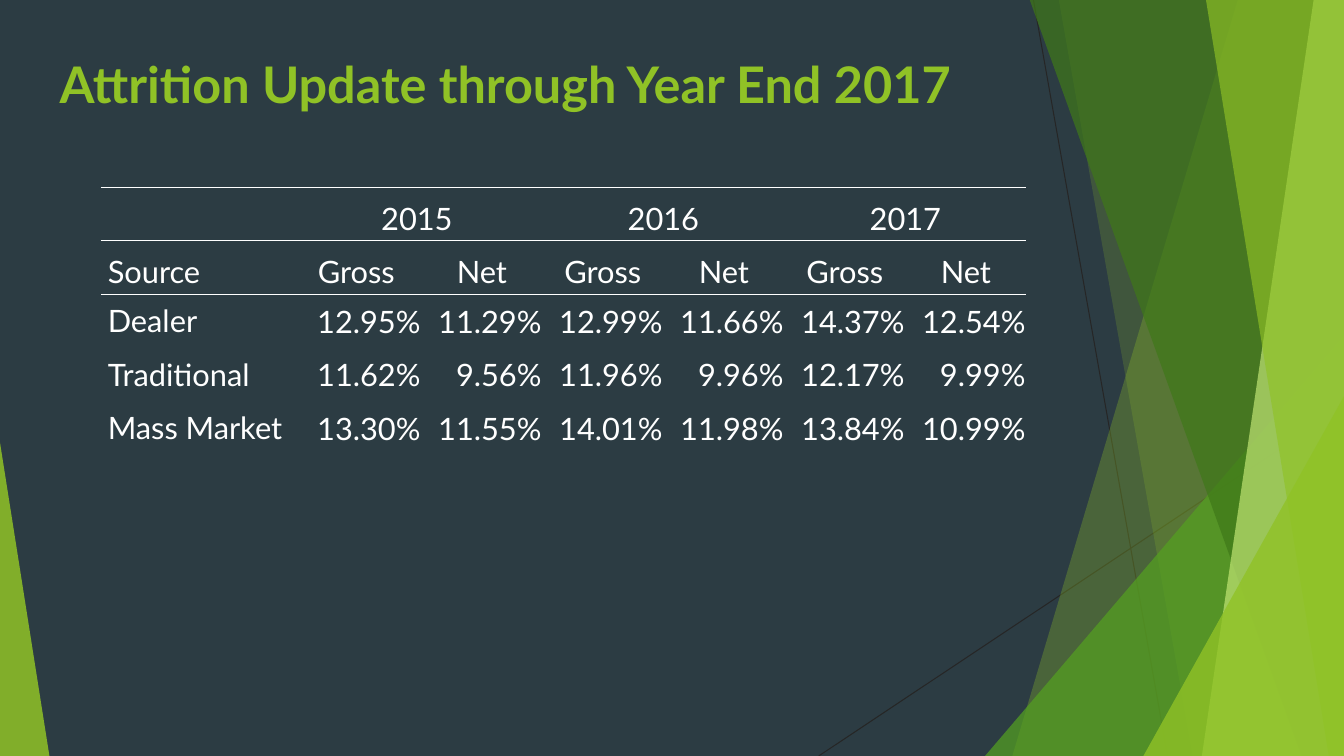
"""Build the attrition update slide."""
from lxml import etree
from pptx import Presentation
from pptx.dml.color import RGBColor
from pptx.enum.shapes import MSO_CONNECTOR, MSO_SHAPE
from pptx.enum.text import MSO_ANCHOR, PP_ALIGN
from pptx.oxml.ns import qn
from pptx.util import Inches, Pt

STRAIGHT = MSO_CONNECTOR.STRAIGHT
TRIANGLE = MSO_SHAPE.ISOSCELES_TRIANGLE
TOP, MIDDLE, BOTTOM = MSO_ANCHOR.TOP, MSO_ANCHOR.MIDDLE, MSO_ANCHOR.BOTTOM
LEFT, CENTER, RIGHT = PP_ALIGN.LEFT, PP_ALIGN.CENTER, PP_ALIGN.RIGHT

BACKGROUND = RGBColor(0x2C, 0x3C, 0x43)
WHITE = RGBColor(0xFF, 0xFF, 0xFF)
LINE = RGBColor(0x26, 0x26, 0x26)
LIME = RGBColor(0x90, 0xC2, 0x26)
GREEN = RGBColor(0x54, 0xA0, 0x21)
DARK_GREEN = RGBColor(0x3F, 0x78, 0x19)
PALE_LIME = RGBColor(0xC0, 0xE4, 0x74)

FONT = "Lato"
WIDTH, HEIGHT = 13.33, 7.5
EDGE_TOP = -0.01
NO_GRID_STYLE = "{2D5ABB26-0587-4C30-8999-92F81FD0307C}"

THIN_LINES = [(10.25, 0, 11.58, HEIGHT), (WIDTH, 4.03, 8.12, HEIGHT)]
BACK_BANDS = [(12.28, 10.04, LIME, 30), (10.5, 11.83, LIME, 20)]
FRONT_BANDS = [(10.21, 12.91, DARK_GREEN, 70), (13.03, 11.92, PALE_LIME, 70),
               (11.96, 13.18, LIME, 65)]

YEARS = ["2015", "2016", "2017"]
HEADINGS = ["Source"] + ["Gross", "Net"] * len(YEARS)
RATES = [
    ["Dealer", "12.95%", "11.29%", "12.99%", "11.66%", "14.37%", "12.54%"],
    ["Traditional", "11.62%", "9.56%", "11.96%", "9.96%", "12.17%", "9.99%"],
    ["Mass Market", "13.30%", "11.55%", "14.01%", "11.98%", "13.84%", "10.99%"],
]
COLUMN_WIDTHS = [1.89, 1.29] + [1.2] * 5
ROW_HEIGHT = 0.53
TEXT_MARGINS = (0.07, 0.04, 0.07, 0.04)
RATE_MARGINS = (0.01, 0.01, 0.01, 0)


def apply_format(target, values):
    """Set each named attribute on the target."""
    for name, value in values.items():
        setattr(target, name, value)


def write_text(frame, text, size, alignment=LEFT, bold=False, color=WHITE):
    """Write one formatted run into a text frame."""
    paragraph = frame.paragraphs[0]
    paragraph.alignment = alignment
    run = paragraph.add_run()
    run.text = text
    apply_format(run.font, {"name": FONT, "size": Pt(size), "bold": bold})
    run.font.color.rgb = color


def paint(shape, color, opacity):
    """Give a shape a translucent fill with no outline or shadow."""
    shape.shadow.inherit = False
    shape.line.fill.background()
    shape.fill.solid()
    shape.fill.fore_color.rgb = color
    fill_color = shape.fill._xPr.find(qn("a:solidFill"))[0]
    etree.SubElement(fill_color, qn("a:alpha"), val=str(opacity * 1000))


def add_thin_line(slide, start_x, start_y, end_x, end_y):
    """Draw a thin dark background line."""
    line = slide.shapes.add_connector(
        STRAIGHT, Inches(start_x), Inches(start_y), Inches(end_x), Inches(end_y))
    line.line.color.rgb = LINE
    line.line.width = Pt(0.75)
    etree.SubElement(line._element.spPr, qn("a:effectLst"))


def add_band(slide, top_x, bottom_x, color, opacity):
    """Draw a slanted band that reaches the right edge of the slide."""
    points = [(WIDTH, EDGE_TOP), (WIDTH, HEIGHT), (bottom_x, HEIGHT)]
    builder = slide.shapes.build_freeform(Inches(top_x), Inches(EDGE_TOP))
    builder.add_line_segments([(Inches(x), Inches(y)) for x, y in points])
    paint(builder.convert_to_shape(), color, opacity)


def add_triangle(slide, left, top, width, apex, color, opacity):
    """Draw a right triangle standing on the bottom edge."""
    shape = slide.shapes.add_shape(
        TRIANGLE, Inches(left), Inches(top), Inches(width), Inches(HEIGHT - top))
    shape.adjustments[0] = apex
    paint(shape, color, opacity)


def add_decoration(slide):
    """Draw the layered green facets from back to front."""
    for line in THIN_LINES:
        add_thin_line(slide, *line)
    for band in BACK_BANDS:
        add_band(slide, *band)
    add_triangle(slide, 9.77, 3.33, 3.56, 1, GREEN, 72)
    for band in FRONT_BANDS:
        add_band(slide, *band)
    add_triangle(slide, 11.34, 3.93, 1.99, 1, LIME, 80)
    add_triangle(slide, 0, 4.39, 0.49, 0, LIME, 85)


def add_title(slide, text):
    """Place the title in front of the decoration."""
    title = slide.shapes.title
    apply_format(title, {"left": Inches(0.49), "top": Inches(0.48),
                         "width": Inches(10.19), "height": Inches(1.61)})
    apply_format(title.text_frame, {"vertical_anchor": TOP, "word_wrap": True})
    write_text(title.text_frame, text, 36, bold=True, color=LIME)
    title.element.getparent().append(title.element)


def add_rules(cell):
    """Rule the top and bottom of a cell in white."""
    properties = cell._tc.get_or_add_tcPr()
    for side in ("a:lnT", "a:lnB"):
        border = etree.SubElement(properties, qn(side), w=str(Pt(1)))
        fill = etree.SubElement(border, qn("a:solidFill"))
        etree.SubElement(fill, qn("a:srgbClr"), val=str(WHITE))


def fill_cell(cell, text, alignment, anchor, margins):
    """Write and align the text of one cell."""
    sides = ("margin_left", "margin_top", "margin_right", "margin_bottom")
    apply_format(cell, dict(zip(sides, map(Inches, margins))))
    cell.vertical_anchor = anchor
    write_text(cell.text_frame, text, 22, alignment)


def add_attrition_table(slide):
    """Build the table of gross and net attrition by source and year."""
    row_count = len(RATES) + 2
    frame = slide.shapes.add_table(
        row_count, len(COLUMN_WIDTHS), Inches(1), Inches(1.86),
        Inches(sum(COLUMN_WIDTHS)), Inches(ROW_HEIGHT * row_count))
    table = frame.table
    apply_format(table, {"first_row": False, "horz_banding": False})
    table._tbl.tblPr.find(qn("a:tableStyleId")).text = NO_GRID_STYLE
    for column, width in zip(table.columns, COLUMN_WIDTHS):
        column.width = Inches(width)
    for row_index, row in enumerate(table.rows):
        row.height = Inches(ROW_HEIGHT)
        for cell in row.cells:
            if row_index < 2:
                add_rules(cell)
            cell.fill.background()
    for index, year in enumerate(YEARS):
        first = table.cell(0, 1 + 2 * index)
        first.merge(table.cell(0, 2 + 2 * index))
        fill_cell(first, year, CENTER, BOTTOM, TEXT_MARGINS)
    for index, heading in enumerate(HEADINGS):
        alignment = CENTER if index else LEFT
        fill_cell(table.cell(1, index), heading, alignment, BOTTOM, TEXT_MARGINS)
    for row_index, (source, *rates) in enumerate(RATES, start=2):
        fill_cell(table.cell(row_index, 0), source, LEFT, MIDDLE, TEXT_MARGINS)
        for column_index, rate in enumerate(rates, start=1):
            fill_cell(table.cell(row_index, column_index), rate, RIGHT, MIDDLE,
                      RATE_MARGINS)


def main():
    """Assemble and save the slide."""
    presentation = Presentation()
    apply_format(presentation, {"slide_width": Inches(WIDTH),
                                "slide_height": Inches(HEIGHT)})
    slide = presentation.slides.add_slide(presentation.slide_layouts[5])
    slide.background.fill.solid()
    slide.background.fill.fore_color.rgb = BACKGROUND
    add_decoration(slide)
    add_title(slide, "Attrition Update through Year End 2017")
    add_attrition_table(slide)
    presentation.save("out.pptx")


if __name__ == "__main__":
    main()
